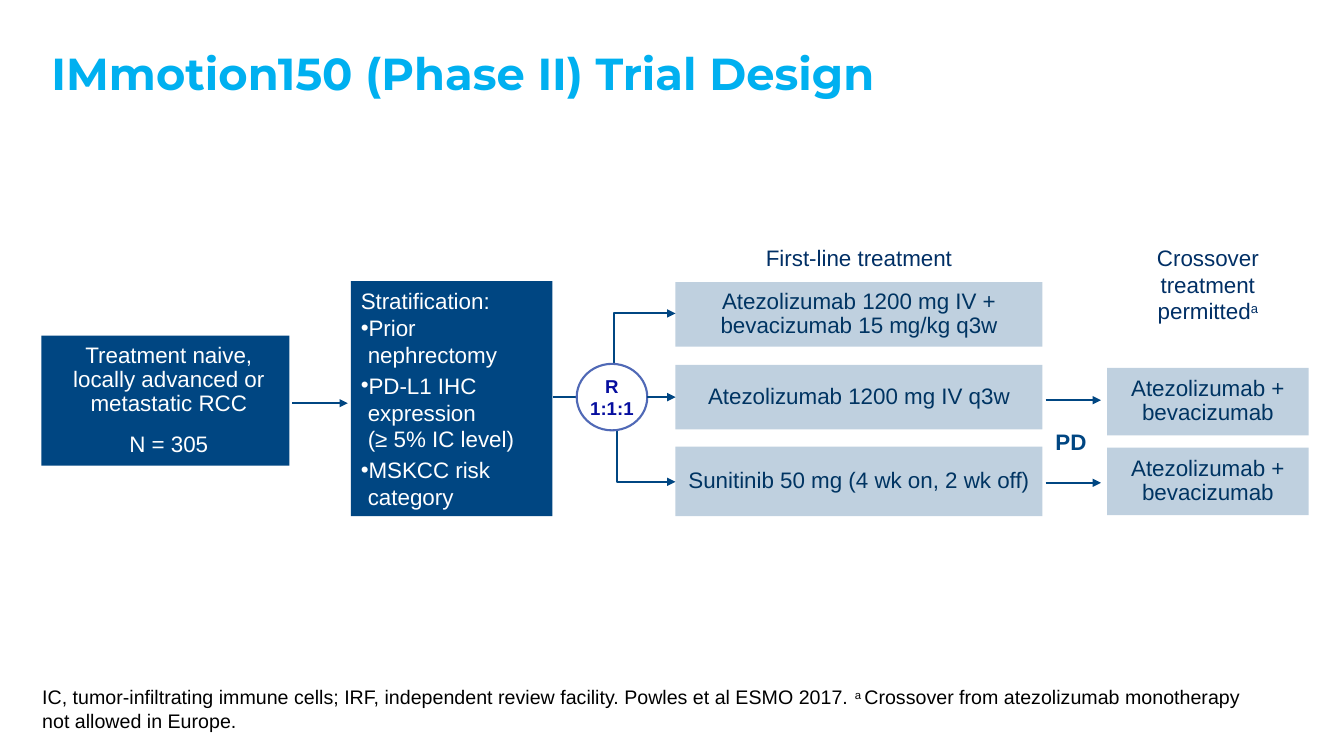
from lxml import etree
from pptx import Presentation
from pptx import util as u
from pptx.dml.color import RGBColor
from pptx.enum import shapes, text
from pptx.oxml.ns import qn

NAVY = "004682"
INK = "003462"
HEAD = "002F65"
WHITE = "FFFFFF"
MID = text.PP_ALIGN.CENTER
LEFT = text.PP_ALIGN.LEFT


def color(code):
    return RGBColor.from_string(code)


def put(para, words, size, code, bold=False, base=None, face="Arial"):
    run = para.add_run()
    run.text = words
    font = run.font
    font.size, font.bold, font.name = u.Pt(size), bold, face
    font.color.rgb = color(code)
    if base:
        run._r.get_or_add_rPr().set("baseline", str(base * 1000))


def inset(frame, side, top):
    frame.margin_left = frame.margin_right = u.Inches(side)
    frame.margin_top = frame.margin_bottom = u.Inches(top)
    frame.vertical_anchor = text.MSO_ANCHOR.MIDDLE
    frame.word_wrap = True


def indent(para, left, first=0):
    props = para._p.get_or_add_pPr()
    props.set("marL", str(u.Inches(left)))
    props.set("indent", str(u.Inches(first)))
    return props


def block(slide, box, fill, kind=shapes.MSO_SHAPE.RECTANGLE, alpha=None, edge=None):
    shape = slide.shapes.add_shape(kind, *map(u.Inches, box))
    shape.shadow.inherit = False
    shape.fill.solid()
    shape.fill.fore_color.rgb = color(fill)
    if alpha:
        tint = shape._element.spPr.find(".//" + qn("a:srgbClr"))
        etree.SubElement(tint, qn("a:alpha")).set("val", str(alpha * 1000))
    if edge:
        shape.line.color.rgb = color(edge)
        shape.line.width = u.Pt(1.5)
    else:
        shape.line.fill.background()
    return shape


def label(slide, box, align=LEFT, wrap=True):
    frame = slide.shapes.add_textbox(*map(u.Inches, box)).text_frame
    frame.word_wrap = wrap
    frame.auto_size = text.MSO_AUTO_SIZE.SHAPE_TO_FIT_TEXT
    para = frame.paragraphs[0]
    para.alignment = align
    return para


def arrow(slide, start, end, kind=shapes.MSO_CONNECTOR.STRAIGHT):
    line = slide.shapes.add_connector(kind, *map(u.Inches, start + end))
    line.line.color.rgb = color(NAVY)
    line.line.width = u.Pt(1.5)
    etree.SubElement(line.line._get_or_add_ln(), qn("a:tailEnd")).set("type", "triangle")
    etree.SubElement(line._element.spPr, qn("a:effectLst"))
    return line


def heading(slide, box, words):
    title = slide.shapes.title
    title.left, title.top, title.width, title.height = map(u.Inches, box)
    inset(title.text_frame, 0.1, 0.05)
    para = title.text_frame.paragraphs[0]
    para.alignment = LEFT
    put(para, words, 32, "00B0F0", True, face="Montserrat")


def cohort(slide, box):
    frame = block(slide, box, NAVY).text_frame
    inset(frame, 0.1, 0.13)
    lines = ["Treatment naive, locally advanced or metastatic RCC", "N = 305"]
    for i, words in enumerate(lines):
        para = frame.add_paragraph() if i else frame.paragraphs[0]
        para.alignment = MID
        para.line_spacing = 0.9
        para.space_before = u.Pt(12)
        indent(para, 0.07)
        put(para, words, 16, WHITE)


def strata(slide, box):
    frame = block(slide, box, NAVY).text_frame
    inset(frame, 0.1, 0.13)
    first = frame.paragraphs[0]
    first.alignment = LEFT
    indent(first, 0.07, -0.07)
    put(first, "Stratification:", 16, WHITE)
    factors = [["Prior nephrectomy"], ["PD-L1 IHC expression ", "(≥ 5% IC level)"],
               ["MSKCC risk category"]]
    for lines in factors:
        para = frame.add_paragraph()
        para.alignment = LEFT
        para.space_after = u.Pt(2.7)
        props = indent(para, 0.07, -0.07)
        tint = etree.SubElement(props, qn("a:buClr"))
        etree.SubElement(tint, qn("a:srgbClr")).set("val", WHITE)
        etree.SubElement(props, qn("a:buFont")).set("typeface", "Arial")
        etree.SubElement(props, qn("a:buChar")).set("char", "•")
        for i, words in enumerate(lines):
            if i:
                para.add_line_break()
            put(para, words, 16, WHITE)


def arm(slide, box, words, gap=6):
    shape = block(slide, box, NAVY, alpha=25)
    inset(shape.text_frame, 0.04, 0.04)
    para = shape.text_frame.paragraphs[0]
    para.alignment = MID
    para.line_spacing = 0.9
    para.space_before = u.Pt(gap)
    put(para, words, 16, INK)
    return shape


def split(slide, box):
    left, top, width, height = box
    mid = top + height / 2
    bent = shapes.MSO_CONNECTOR.ELBOW
    arrow(slide, (left - 0.24, mid), (6.7, 3.11), bent)
    arrow(slide, (left - 0.18, mid), (6.7, 4.78), bent)
    node = block(slide, box, WHITE, shapes.MSO_SHAPE.OVAL, edge="5069B6")
    inset(node.text_frame, 0, 0)
    para = node.text_frame.paragraphs[0]
    para.alignment = MID
    put(para, "R 1:1:1", 13.3, "060E9F", True)
    return arrow(slide, (left + width, mid), (6.7, mid))


def first_line(slide, box, link):
    left, top, width = box
    para = label(slide, (left, top, width, 0.37), MID)
    put(para, "First-line treatment", 16, HEAD)
    arm(slide, (left, top + 0.43, width, 0.64),
        "Atezolizumab 1200 mg IV + bevacizumab 15 mg/kg q3w")
    mono = arm(slide, (left, top + 1.25, width, 0.64), "Atezolizumab 1200 mg IV q3w")
    link.end_connect(mono, 1)
    arm(slide, (left, top + 2.06, width, 0.69), "Sunitinib 50 mg (4 wk on, 2 wk off)", 8)


def crossover(slide, box):
    left, top, width = box
    para = label(slide, (left, top, width, 0.91), MID)
    put(para, "Crossover treatment permitted", 16, HEAD)
    put(para, "a", 16, HEAD, base=30)
    for i in range(2):
        arm(slide, (left, top + 1.28 + 0.79 * i, width, 0.67), "Atezolizumab + bevacizumab")
        y = top + 1.6 + 0.82 * i
        arrow(slide, (left - 0.61, y), (left - 0.06, y))
    para = label(slide, (left - 0.61, top + 1.83, 0.51, 0.37), wrap=False)
    put(para, "PD", 16, NAVY, True)


def notes(slide, box):
    para = label(slide, box)
    put(para, "IC, tumor-infiltrating immune cells; IRF, independent review facility. "
        "Powles et al ESMO 2017. ", 14, "000000")
    put(para, "a ", 14, "000000", base=30)
    put(para, "Crossover from atezolizumab monotherapy not allowed in Europe.", 14, "000000")


def main():
    deck = Presentation()
    deck.slide_width, deck.slide_height = u.Inches(13.33), u.Inches(7.5)
    slide = deck.slides.add_slide(deck.slide_layouts[5])
    heading(slide, (0.41, 0.17, 12.5, 1.09), "IMmotion150 (Phase II) Trial Design")
    cohort(slide, (0.41, 3.33, 2.46, 1.29))
    arrow(slide, (2.9, 4), (3.45, 4))
    strata(slide, (3.48, 2.79, 2, 2.33))
    link = split(slide, (5.72, 3.61, 0.7, 0.66))
    first_line(slide, (6.7, 2.37, 3.64), link)
    crossover(slide, (10.98, 2.37, 2))
    notes(slide, (0.32, 6.75, 12.21, 0.57))
    deck.save("out.pptx")


if __name__ == "__main__":
    main()
